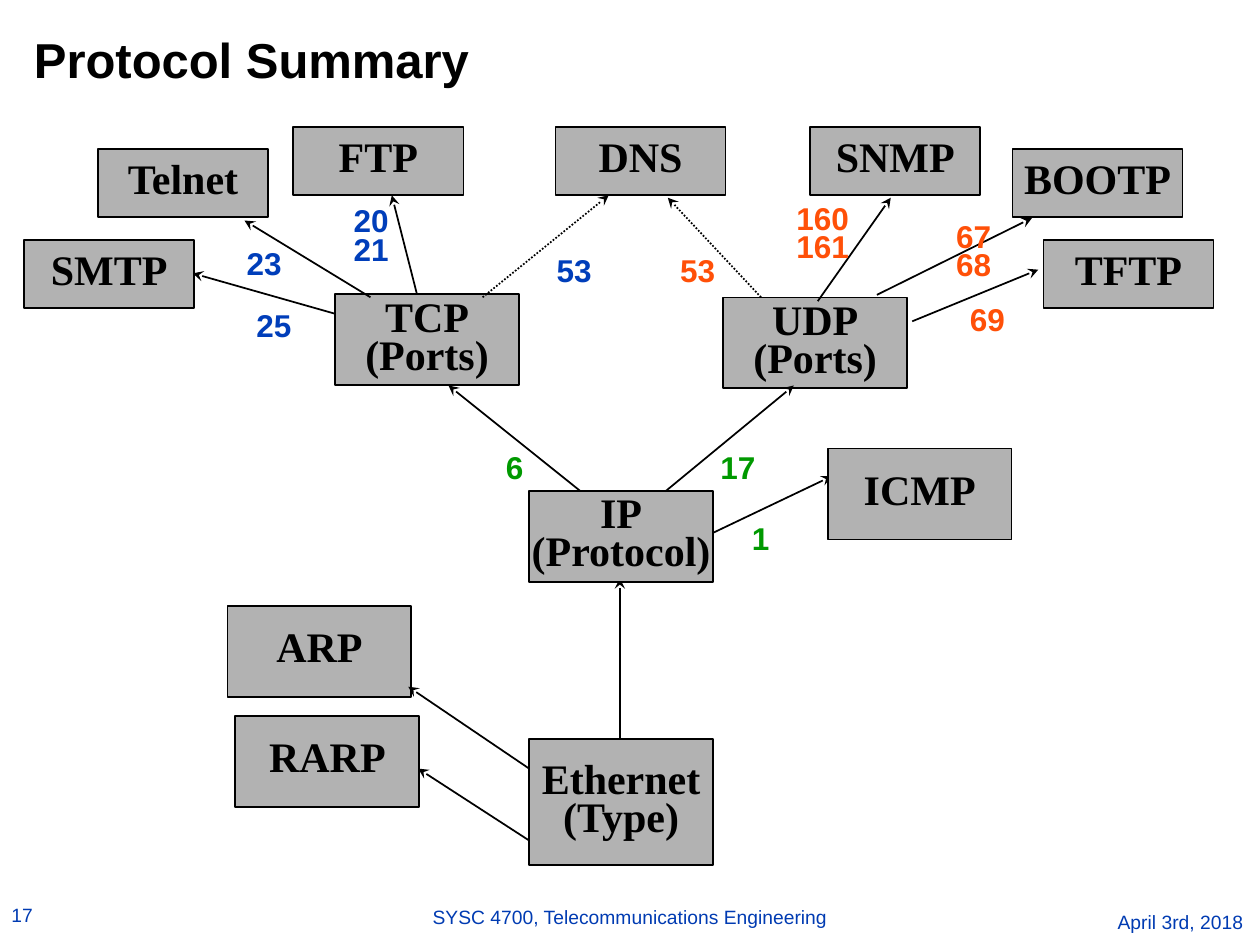
from dataclasses import dataclass
from typing import Any

from lxml import etree
from pptx import Presentation, util as u
from pptx.dml.color import RGBColor
from pptx.enum import dml, shapes, text
from pptx.oxml import ns


@dataclass(frozen=True)
class Theme:
    ink: str = "000000"
    box_fill: str = "B2B2B2"
    footer: str = "003BB2"
    tcp: str = "003EBA"
    udp: str = "FF5008"
    ip: str = "009900"
    sans: str = "Arial"
    serif: str = "Times New Roman"
    title_size: float = 28
    box_size: float = 24
    label_size: float = 18
    footer_size: float = 11
    line_width: float = 1
    tight: float = 0.75


@dataclass(frozen=True)
class Node:
    caption: str
    left: float
    top: float
    width: float = 105.1
    height: float = 52


@dataclass(frozen=True)
class Application(Node):
    width: float = 97.2
    height: float = 39


@dataclass(frozen=True)
class Arrow:
    x1: float
    y1: float
    x2: float
    y2: float
    dotted: bool = False


@dataclass(frozen=True)
class Label:
    caption: str
    left: float
    top: float
    color: str
    tight: bool = False


THEME = Theme()

NODES = [
    Node("UDP\n(Ports)", 413.3, 170),
    Node("TCP\n(Ports)", 191.5, 168.2),
    Node("ARP", 130, 346.2),
    Node("ICMP", 473, 256.3),
    Node("IP\n(Protocol)", 302.4, 280.6),
    Node("Ethernet\n(Type)", 302.4, 422.2, height=72),
    Node("RARP", 134.5, 409),
    Application("BOOTP", 578.6, 85),
    Application("Telnet", 56, 85),
    Application("FTP", 167.6, 72.5),
    Application("SNMP", 463, 72.5),
    Application("DNS", 317.4, 72.5),
    Application("SMTP", 13.8, 137),
    Application("TFTP", 596.2, 137),
]

ARROWS_BEHIND = [
    Arrow(393.8, 311, 475.2, 272.2),      # IP to ICMP
    Arrow(331.9, 280.8, 256.3, 220.3),    # IP to TCP
    Arrow(354.2, 423.4, 354.2, 330.5),    # Ethernet to IP
    Arrow(306.7, 483.1, 239, 439.2),      # Ethernet to RARP
]

ARROWS_IN_FRONT = [
    Arrow(302.4, 439.2, 233.3, 392.4),    # Ethernet to ARP
    Arrow(380.2, 280.8, 453.6, 220.3),    # IP to UDP
    Arrow(191.5, 179.3, 110.2, 156.2),    # TCP to SMTP
    Arrow(211.7, 169.9, 139.7, 126),      # TCP to Telnet
    Arrow(238.3, 168.2, 223.9, 111.6),    # TCP to FTP
    Arrow(521.3, 183.6, 593.3, 154.1),    # UDP to TFTP
    Arrow(501.1, 168.5, 589.7, 124.6),    # UDP to BOOTP
    Arrow(467.3, 172.1, 509, 113),        # UDP to SNMP
    Arrow(275.8, 169.9, 347.8, 111.6, dotted=True),  # TCP to DNS
    Arrow(434.9, 169.9, 381.6, 113, dotted=True),    # UDP to DNS
]

LABELS = [
    Label("23", 133.9, 136.1, THEME.tcp),
    Label("20\n21", 195, 116.6, THEME.tcp, tight=True),
    Label("25", 139.5, 171.4, THEME.tcp),
    Label("53", 311, 139.7, THEME.tcp),
    Label("53", 381.6, 139.7, THEME.udp),
    Label("160\n161", 448, 115.2, THEME.udp, tight=True),
    Label("67\n68", 539.3, 125.5, THEME.udp, tight=True),
    Label("69", 547.2, 172.8, THEME.udp, tight=True),
    Label("1", 422.6, 293, THEME.ip),
    Label("6", 282, 252.7, THEME.ip),
    Label("17", 404.6, 252.7, THEME.ip),
]


def write(box: Any, caption: str, *, size: float, font: str, color: str,
          bold: bool = False, align: Any = text.PP_ALIGN.LEFT,
          anchor: Any = text.MSO_ANCHOR.TOP, spacing: float = 1,
          wrap: bool = False, inset: tuple[float, float] = (7.2, 3.6)) -> None:
    """Fill a shape with one paragraph per line of the caption."""
    frame = box.text_frame
    frame.word_wrap = wrap
    frame.vertical_anchor = anchor
    frame.margin_left = frame.margin_right = u.Pt(inset[0])
    frame.margin_top = frame.margin_bottom = u.Pt(inset[1])
    frame.text = caption
    for para in frame.paragraphs:
        para.alignment = align
        para.line_spacing = spacing
        for span in para.runs:
            span.font.size = u.Pt(size)
            span.font.name = font
            span.font.bold = bold
            span.font.color.rgb = RGBColor.from_string(color)


def add_text(page: Any, caption: str, left: float, top: float, width: float,
             height: float, **style: Any) -> None:
    box = page.shapes.add_textbox(u.Pt(left), u.Pt(top), u.Pt(width), u.Pt(height))
    write(box, caption, **style)


def add_node(page: Any, node: Node) -> None:
    box = page.shapes.add_shape(shapes.MSO_SHAPE.RECTANGLE, u.Pt(node.left),
                                u.Pt(node.top), u.Pt(node.width), u.Pt(node.height))
    box.shadow.inherit = False
    box.fill.solid()
    box.fill.fore_color.rgb = RGBColor.from_string(THEME.box_fill)
    box.line.color.rgb = RGBColor.from_string(THEME.ink)
    box.line.width = u.Pt(THEME.line_width)
    write(box, node.caption, size=THEME.box_size, font=THEME.serif, color=THEME.ink,
          bold=True, align=text.PP_ALIGN.CENTER, anchor=text.MSO_ANCHOR.MIDDLE,
          spacing=THEME.tight)


def add_arrow(page: Any, arrow: Arrow) -> None:
    connector = page.shapes.add_connector(
        shapes.MSO_CONNECTOR.STRAIGHT, u.Pt(arrow.x1), u.Pt(arrow.y1),
        u.Pt(arrow.x2), u.Pt(arrow.y2))
    connector.line.color.rgb = RGBColor.from_string(THEME.ink)
    connector.line.width = u.Pt(THEME.line_width)
    if arrow.dotted:
        connector.line.dash_style = dml.MSO_LINE.ROUND_DOT
    properties = connector.element.spPr
    etree.SubElement(properties.find(ns.qn("a:ln")), ns.qn("a:tailEnd"), type="stealth")
    etree.SubElement(properties, ns.qn("a:effectLst"))


def add_label(page: Any, label: Label) -> None:
    lines = label.caption.split("\n")
    width = 14.4 + 10 * len(lines[0])
    height = 7.2 + (16.2 if label.tight else 21.6) * len(lines)
    add_text(page, label.caption, label.left, label.top, width, height,
             size=THEME.label_size, font=THEME.sans, color=label.color, bold=True,
             spacing=THEME.tight if label.tight else 1)


def main() -> None:
    deck = Presentation()
    deck.slide_width, deck.slide_height = u.Pt(720), u.Pt(540)
    page = deck.slides.add_slide(deck.slide_layouts[6])

    footer = dict(size=THEME.footer_size, font=THEME.sans, color=THEME.footer)
    add_text(page, "April 3rd, 2018 ", 528, 520, 192, 13, wrap=True, inset=(6.5, 0),
             align=text.PP_ALIGN.RIGHT, **footer)
    add_text(page, "SYSC 4700, Telecommunications Engineering", 239, 514, 242, 20,
             inset=(6.5, 3.6), align=text.PP_ALIGN.CENTER, **footer)
    add_text(page, "17", 0, 516, 192, 13, wrap=True, inset=(6.5, 0), **footer)
    add_text(page, "Protocol Summary", 15.8, 20.9, 692.6, 30, size=THEME.title_size,
             font=THEME.sans, color=THEME.ink, bold=True, spacing=0.89, wrap=True,
             inset=(3.6, 0))

    for arrow in ARROWS_BEHIND:
        add_arrow(page, arrow)
    for node in NODES:
        add_node(page, node)
    for arrow in ARROWS_IN_FRONT:
        add_arrow(page, arrow)
    for label in LABELS:
        add_label(page, label)
    deck.save("out.pptx")


if __name__ == "__main__":
    main()
